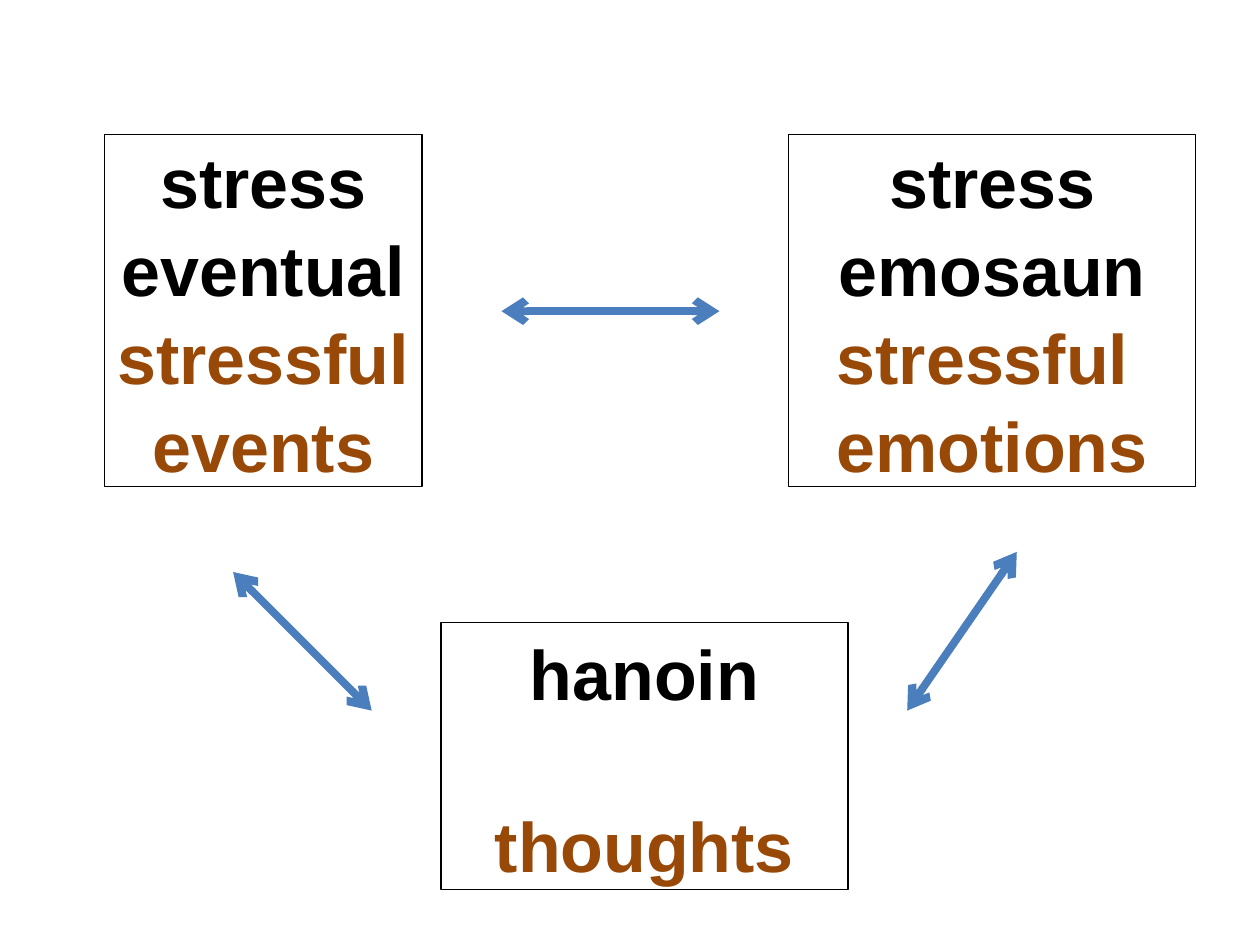
from lxml.etree import SubElement
from pptx import Presentation
from pptx.dml.color import RGBColor
from pptx.enum.shapes import MSO_CONNECTOR, MSO_SHAPE
from pptx.enum.text import MSO_ANCHOR, PP_ALIGN
from pptx.oxml.ns import qn
from pptx.util import Inches, Pt

COLORS = {"black": "000000", "brown": "984807", "blue": "4B7EBC"}
FONT = {"name": "Arial", "size": Pt(40), "bold": True}
FRAME = {"word_wrap": True, "vertical_anchor": MSO_ANCHOR.MIDDLE}

# Boxes: left, top, width, height, then (text, colour, points before)
BOXES = [
    ((0.83, 1.07, 2.52, 2.79),
     [("stress eventual", "black", 0), ("stressful ", "brown", 0), ("events", "brown", 0)]),
    ((6.26, 1.07, 3.23, 2.79),
     [("stress emosaun", "black", 0), ("stressful ", "brown", 0), ("emotions", "brown", 0)]),
    ((3.5, 4.94, 3.23, 2.12),
     [("hanoin", "black", 0), ("thoughts", "brown", 48)]),
]

# Two-way arrows: from x, from y, to x, to y
ARROWS = [
    (3.98, 2.47, 5.71, 2.47),
    (7.2, 5.64, 8.07, 4.38),
    (2.95, 5.64, 1.85, 4.54),
]


def rgb(name):
    return RGBColor.from_string(COLORS[name])


def apply(target, values):
    for name, value in values.items():
        setattr(target, name, value)


def add_box(slide, place, lines):
    shape = slide.shapes.add_shape(MSO_SHAPE.RECTANGLE, *map(Inches, place))
    shape.shadow.inherit = False
    shape.fill.background()
    shape.line.color.rgb = rgb("black")
    shape.line.width = Pt(0.75)
    frame = shape.text_frame
    apply(frame, FRAME)
    for index, (text, color, before) in enumerate(lines):
        paragraph = frame.add_paragraph() if index else frame.paragraphs[0]
        apply(paragraph, {"alignment": PP_ALIGN.CENTER, "line_spacing": 1.05,
                          "space_before": Pt(before)})
        run = paragraph.add_run()
        run.text = text
        apply(run.font, FONT)
        run.font.color.rgb = rgb(color)


def add_arrow(slide, ends):
    connector = slide.shapes.add_connector(MSO_CONNECTOR.STRAIGHT, *map(Inches, ends))
    connector.line.color.rgb = rgb("blue")
    connector.line.width = Pt(4.5)
    # Arrowheads at both ends, no shadow
    properties = connector._element.spPr
    outline = properties.find(qn("a:ln"))
    for tag in ("a:headEnd", "a:tailEnd"):
        SubElement(outline, qn(tag), type="arrow")
    SubElement(properties, qn("a:effectLst"))


def main():
    presentation = Presentation()
    presentation.slide_width = Inches(10)
    presentation.slide_height = Inches(7.5)
    slide = presentation.slides.add_slide(presentation.slide_layouts[6])
    for place, lines in BOXES:
        add_box(slide, place, lines)
    for ends in ARROWS:
        add_arrow(slide, ends)
    presentation.save("out.pptx")


if __name__ == "__main__":
    main()
